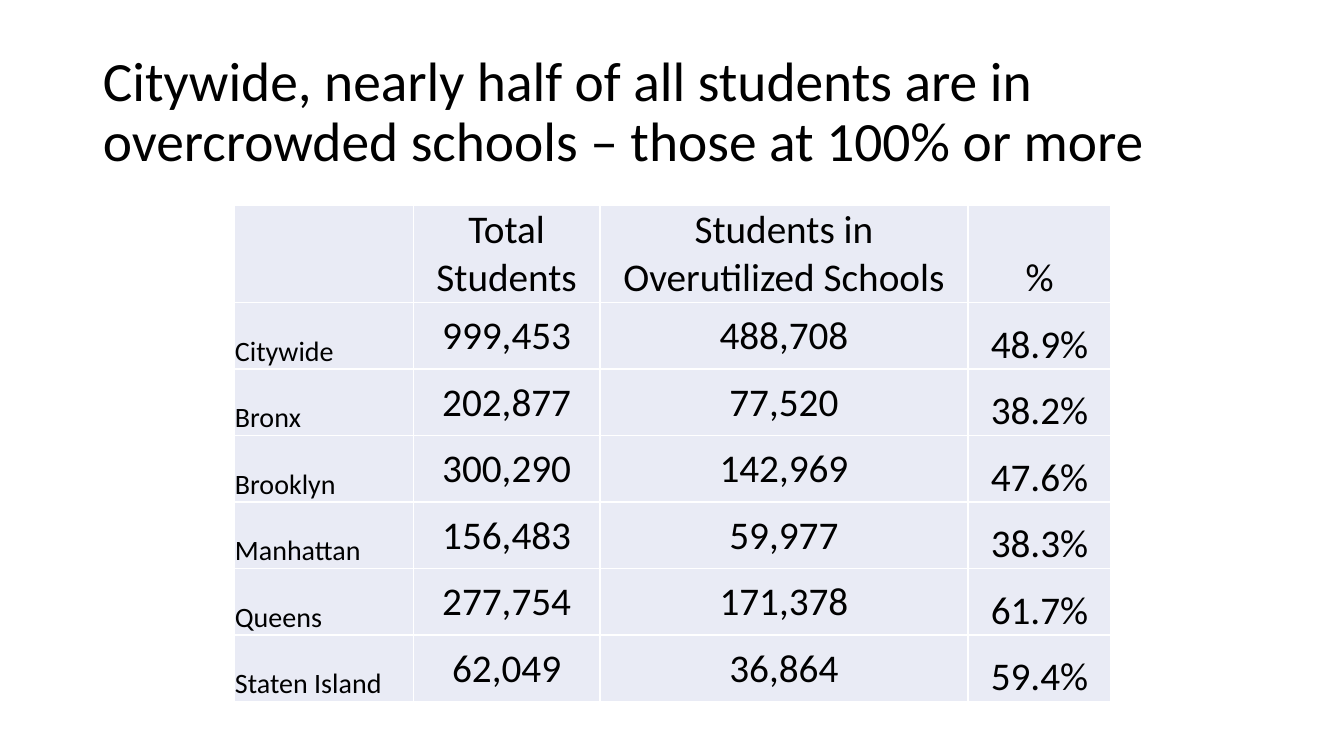
from lxml.etree import SubElement
from pptx import Presentation
from pptx.dml.color import RGBColor
from pptx.enum.text import MSO_ANCHOR, PP_ALIGN
from pptx.oxml.ns import qn
from pptx.util import Inches, Pt

TITLE = ("Citywide, nearly half of all students are in "
         "overcrowded schools – those at 100% or more")
HEAD = ("", "Total Students", "Students in Overutilized Schools", "%")
ROWS = (
    ("Citywide", "999,453", "488,708", "48.9%"),
    ("Bronx", "202,877", "77,520", "38.2%"),
    ("Brooklyn", "300,290", "142,969", "47.6%"),
    ("Manhattan", "156,483", "59,977", "38.3%"),
    ("Queens", "277,754", "171,378", "61.7%"),
    ("Staten Island", "62,049", "36,864", "59.4%"),
)
COLS = (1.78, 1.85, 3.65, 1.42)
ROW = 0.66
INK, PALE, WHITE = "000000", "E9EBF5", "FFFFFF"
PAD = {"margin_left": Inches(0.01), "margin_right": Inches(0.01),
       "margin_top": Inches(0.01), "margin_bottom": 0}


def color(code):
    return RGBColor.from_string(code)


def apply(item, form):
    for name, value in form.items():
        setattr(item, name, value)


def style(par, size, align):
    par.alignment = align
    apply(par.font, {"name": "Calibri", "size": Pt(size), "bold": False})
    par.font.color.rgb = color(INK)


def border(cell):
    props = cell._tc.get_or_add_tcPr()
    for side in ("a:lnL", "a:lnR", "a:lnT", "a:lnB"):
        line = SubElement(props, qn(side), w=str(Pt(1)))
        fill = SubElement(line, qn("a:solidFill"))
        SubElement(fill, qn("a:srgbClr"), val=WHITE)


def add_title(slide, left, top, width, height):
    title = slide.shapes.title
    apply(title, {"left": Inches(left), "top": Inches(top),
                  "width": Inches(width), "height": Inches(height)})
    frame = title.text_frame
    apply(frame, {"text": TITLE, "word_wrap": True,
                  "vertical_anchor": MSO_ANCHOR.MIDDLE})
    par = frame.paragraphs[0]
    style(par, 39.6, PP_ALIGN.LEFT)
    par.line_spacing = 0.9


def fill_cell(cell, text, row, col):
    border(cell)
    cell.fill.solid()
    cell.fill.fore_color.rgb = color(PALE)
    if not text:
        return
    middle = row > 0 and col in (1, 2)
    apply(cell, PAD)
    apply(cell, {"text": text, "vertical_anchor":
                 MSO_ANCHOR.MIDDLE if middle else MSO_ANCHOR.BOTTOM})
    style(cell.text_frame.paragraphs[0], 28 if col else 20,
          PP_ALIGN.CENTER if col else PP_ALIGN.LEFT)


def add_grid(slide, left, top):
    data = (HEAD,) + ROWS
    table = slide.shapes.add_table(
        len(data), len(COLS), Inches(left), Inches(top),
        Inches(sum(COLS)), Inches(ROW * len(data))).table
    apply(table, {"first_row": False, "horz_banding": False})
    for col, width in zip(table.columns, COLS):
        col.width = Inches(width)
    for r, texts in enumerate(data):
        table.rows[r].height = Inches(ROW)
        for c, text in enumerate(texts):
            fill_cell(table.cell(r, c), text, r, c)


def main():
    deck = Presentation()
    apply(deck, {"slide_width": Inches(13.33), "slide_height": Inches(7.5)})
    slide = deck.slides.add_slide(deck.slide_layouts[5])
    add_title(slide, 0.92, 0.4, 11.5, 1.45)
    add_grid(slide, 2.32, 2.04)
    deck.save("out.pptx")


if __name__ == "__main__":
    main()
